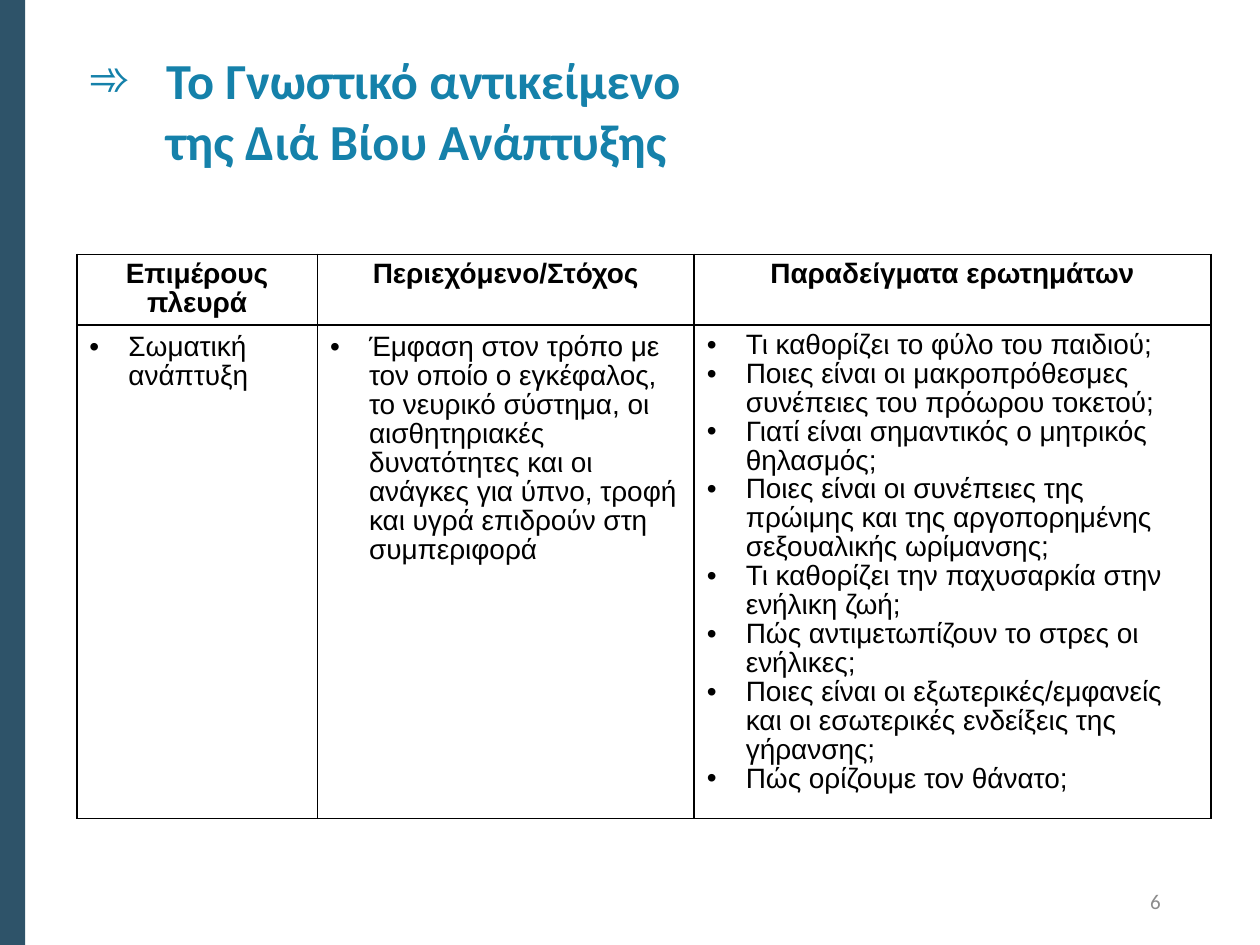
"""Builds the slide on the subject of lifespan development."""
from lxml.etree import SubElement
from pptx import Presentation
from pptx.dml.color import RGBColor
from pptx.enum.shapes import MSO_SHAPE as Shape
from pptx.enum.text import MSO_ANCHOR as Anchor, PP_ALIGN as Align
from pptx.oxml.ns import qn
from pptx.util import Pt


def color(value):
    return RGBColor.from_string(value)


def format_paragraph(paragraph, font, bullet=None, indent=0, bullet_color=None, **spacing):
    for name, value in font.items():
        if name == "color":
            paragraph.font.color.rgb = color(value)
        else:
            setattr(paragraph.font, name, value)
    for name, value in spacing.items():
        setattr(paragraph, name, value)
    if bullet:
        properties = paragraph._p.get_or_add_pPr()
        properties.set("marL", str(Pt(indent)))
        properties.set("indent", str(-Pt(indent)))
        if bullet_color:
            SubElement(SubElement(properties, qn("a:buClr")), qn("a:srgbClr"), val=bullet_color)
        SubElement(properties, qn("a:buFont"), typeface="Arial")
        SubElement(properties, qn("a:buChar"), char=bullet)


TITLE_FONT = {"name": "Calibri", "size": Pt(28.8), "bold": True, "color": "1581AA"}
NUMBER_FONT = {"name": "Calibri", "size": Pt(12), "color": "8C8C8C"}
CELL_FONT = {"name": "Arial", "size": Pt(16), "color": "000000"}
COLUMN_WIDTHS = [137.5, 215.3, 295.2]
ROW_HEIGHTS = [40.3, 282.2]
HEADERS = ["Επιμέρους πλευρά", "Περιεχόμενο/Στόχος", "Παραδείγματα ερωτημάτων"]
DETAILS = [
    ["Σωματική ανάπτυξη"],
    ["Έμφαση στον τρόπο με τον οποίο ο εγκέφαλος, το νευρικό σύστημα, οι αισθητηριακές "
     "δυνατότητες και οι ανάγκες για ύπνο, τροφή και υγρά επιδρούν στη συμπεριφορά"],
    ["Τι καθορίζει το φύλο του παιδιού;",
     "Ποιες είναι οι μακροπρόθεσμες συνέπειες του πρόωρου τοκετού;",
     "Γιατί είναι σημαντικός ο μητρικός θηλασμός;",
     "Ποιες είναι οι συνέπειες της πρώιμης και της αργοπορημένης σεξουαλικής ωρίμανσης;",
     "Τι καθορίζει την παχυσαρκία στην ενήλικη ζωή;",
     "Πώς αντιμετωπίζουν το στρες οι ενήλικες;",
     "Ποιες είναι οι εξωτερικές/εμφανείς και οι εσωτερικές ενδείξεις της γήρανσης;",
     "Πώς ορίζουμε τον θάνατο;"],
]

presentation = Presentation()
presentation.slide_width, presentation.slide_height = Pt(720), Pt(540)
slide = presentation.slides.add_slide(presentation.slide_layouts[5])

side_bar = slide.shapes.add_shape(Shape.RECTANGLE, 0, 0, Pt(14.4), Pt(540))
side_bar.shadow.inherit = False
side_bar.fill.solid()
side_bar.fill.fore_color.rgb = color("2E5369")
side_bar.line.fill.background()

title = slide.shapes.title
title.left, title.top, title.width, title.height = Pt(43.2), Pt(24.5), Pt(629.3), Pt(69.8)
title.text_frame.text = "Το Γνωστικό αντικείμενο\vτης Διά Βίου Ανάπτυξης"
title.text_frame.vertical_anchor = Anchor.TOP
format_paragraph(title.text_frame.paragraphs[0], TITLE_FONT, "➾", 44.6, alignment=Align.LEFT)

table = slide.shapes.add_table(2, 3, Pt(43.9), Pt(145.4), Pt(sum(COLUMN_WIDTHS)),
                               Pt(sum(ROW_HEIGHTS))).table
table.first_row = table.horz_banding = False
for column, width in zip(table.columns, COLUMN_WIDTHS):
    column.width = Pt(width)
for row, height in zip(table.rows, ROW_HEIGHTS):
    row.height = Pt(height)

for cell in table.iter_cells():
    cell_properties = cell._tc.get_or_add_tcPr()
    for side in ("lnL", "lnR", "lnT", "lnB"):
        border = SubElement(cell_properties, qn(f"a:{side}"), w=str(Pt(0.96)))
        SubElement(SubElement(border, qn("a:solidFill")), qn("a:srgbClr"), val="000000")
    cell.fill.background()

for index, (header, details) in enumerate(zip(HEADERS, DETAILS)):
    header_cell, detail_cell = table.cell(0, index), table.cell(1, index)
    header_cell.text = header
    format_paragraph(header_cell.text_frame.paragraphs[0], {**CELL_FONT, "bold": True},
                     alignment=Align.CENTER, line_spacing=0.93)
    detail_cell.text = "\n".join(details)
    single = len(details) == 1
    if single:
        detail_cell.margin_top = Pt(5)
    for paragraph in detail_cell.text_frame.paragraphs:
        format_paragraph(paragraph, {**CELL_FONT, "bold": False}, "•", 22.3, "000000",
                         line_spacing=0.93, space_before=Pt(15 if single else 0))

number_box = slide.shapes.add_textbox(Pt(508.3), Pt(500.4), Pt(162), Pt(28.8))
number_box.text_frame.word_wrap = True
number_box.text_frame.vertical_anchor = Anchor.MIDDLE
number_box.text_frame.text = "6"
format_paragraph(number_box.text_frame.paragraphs[0], NUMBER_FONT, alignment=Align.RIGHT)

presentation.save("out.pptx")
